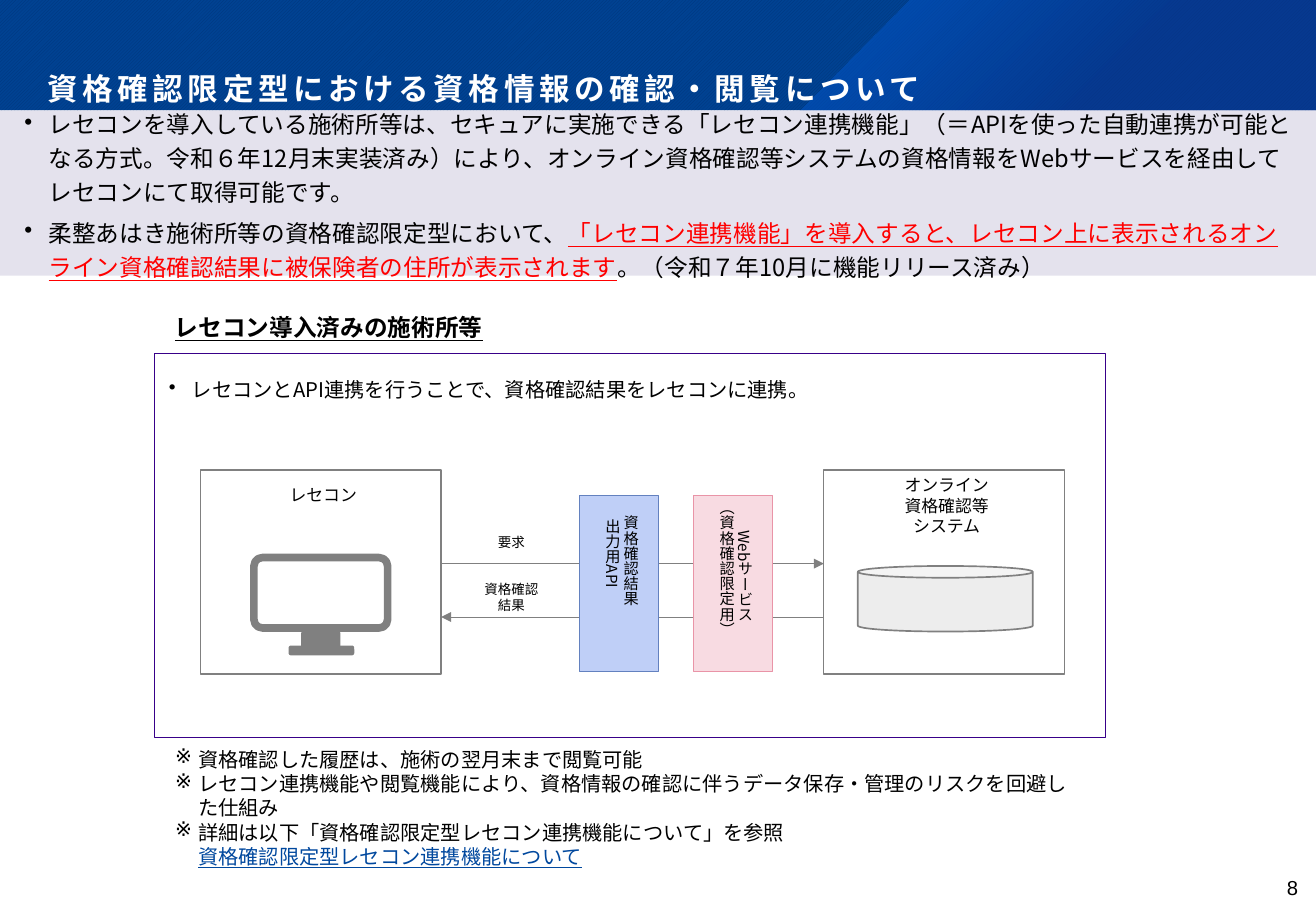
from dataclasses import dataclass
from lxml.etree import SubElement
from pptx import Presentation
from pptx.dml.color import RGBColor
from pptx.enum.dml import MSO_PATTERN
from pptx.enum.shapes import MSO_CONNECTOR, MSO_SHAPE as Preset
from pptx.enum.text import MSO_ANCHOR as Anchor, PP_ALIGN as Align
from pptx.oxml import parse_xml
from pptx.oxml.ns import nsdecls, qn
from pptx.util import Inches, Pt

JAPANESE = "Noto Sans CJK JP"
BLACK, WHITE = RGBColor(0, 0, 0), RGBColor(255, 255, 255)
RED, LINK = RGBColor(255, 0, 0), RGBColor(0, 0x48, 0x9E)
NAVY, NAVY_STRIPE = RGBColor(0, 0x42, 0x92), RGBColor(0, 0x35, 0x79)
LAVENDER, FRAME = RGBColor(0xE4, 0xE2, 0xED), RGBColor(0x38, 0, 0x89)
GRAY, PALE_GRAY = RGBColor(0x80, 0x80, 0x80), RGBColor(0xED, 0xED, 0xED)
API_FILL, API_LINE = RGBColor(0xBF, 0xCF, 0xF7), RGBColor(0x63, 0x81, 0xBF)
WEB_FILL, WEB_LINE = RGBColor(0xF8, 0xDB, 0xE2), RGBColor(0xE9, 0x94, 0xA7)
ACCENT_GRADIENT = (
    f'<a:gradFill {nsdecls("a")} rotWithShape="1"><a:gsLst>'
    '<a:gs pos="0"><a:srgbClr val="0064DF"><a:alpha val="50000"/></a:srgbClr></a:gs>'
    '<a:gs pos="62000"><a:srgbClr val="0C338E"><a:alpha val="55000"/></a:srgbClr></a:gs>'
    '</a:gsLst><a:path path="circle"><a:fillToRect r="100000" b="100000"/></a:path>'
    '</a:gradFill>')


@dataclass
class Box:
    """A rectangle in inches."""
    left: float
    top: float
    width: float
    height: float

    def inner(self, left, top, width, height):
        """Return a box placed relative to this one."""
        return Box(self.left + left, self.top + top, width, height)

    def lengths(self):
        """Return the four lengths for python-pptx."""
        return [Inches(n) for n in (self.left, self.top, self.width, self.height)]


def add_box(slide, box, fill=None, line=None, weight=0.75, preset=Preset.RECTANGLE, adjust=None):
    """Add a preset shape without shadow."""
    shape = slide.shapes.add_shape(preset, *box.lengths())
    shape.shadow.inherit = False
    if adjust is not None:
        shape.adjustments[0] = adjust
    if fill is not None:
        shape.fill.solid()
        shape.fill.fore_color.rgb = fill
    if line is None:
        shape.line.fill.background()
    else:
        shape.line.color.rgb = line
        shape.line.width = Pt(weight)
    return shape


def set_frame(shape, insets, anchor=Anchor.TOP, wrap=True):
    """Set the insets, anchor and wrapping of a text frame."""
    frame = shape.text_frame
    frame.margin_left, frame.margin_top, frame.margin_right, frame.margin_bottom = map(Inches, insets)
    frame.vertical_anchor = anchor
    frame.word_wrap = wrap
    return frame


def add_span(para, text, size, color=BLACK, bold=False, underline=False, name=JAPANESE):
    """Add one run of text with its font."""
    span = para.add_run()
    span.text = text
    font = span.font
    font.size, font.name, font.bold, font.underline = Pt(size), name, bold, underline
    font.color.rgb = color
    SubElement(span._r.get_or_add_rPr(), qn("a:ea"), typeface=name)
    return span


def set_indent(para, indent, bullet=None):
    """Give a paragraph a left margin and, if asked, a hanging bullet."""
    properties = para._p.get_or_add_pPr()
    properties.set("marL", str(Inches(indent)))
    if bullet:
        properties.set("indent", str(-Inches(indent)))
        SubElement(properties, qn("a:buChar"), char=bullet)


def add_lines(frame, lines, size, align=Align.LEFT, **style):
    """Write one paragraph for each line and return the paragraphs."""
    paras = []
    for index, line in enumerate(lines):
        para = frame.add_paragraph() if index else frame.paragraphs[0]
        para.alignment = align
        add_span(para, line, size, **style)
        paras.append(para)
    return paras


def add_text(slide, box, lines, size, insets, anchor=Anchor.TOP, wrap=True, **style):
    """Add a text box and return its paragraphs."""
    frame = set_frame(slide.shapes.add_textbox(*box.lengths()), insets, anchor, wrap)
    return add_lines(frame, lines, size, **style)


def add_header(slide, box):
    """Draw the title band with its slanted accent."""
    band = add_box(slide, box)
    band.fill.patterned()
    band.fill.pattern = MSO_PATTERN.DARK_UPWARD_DIAGONAL
    band.fill.fore_color.rgb, band.fill.back_color.rgb = NAVY_STRIPE, NAVY
    right, bottom = box.left + box.width, box.top + box.height
    builder = slide.shapes.build_freeform(Inches(7.49), Inches(box.top))
    corners = [(right, box.top), (right, bottom), (6.58, bottom)]
    builder.add_line_segments([(Inches(x), Inches(y)) for x, y in corners])
    accent = builder.convert_to_shape()
    accent.shadow.inherit = False
    accent.line.fill.background()
    accent._element.spPr.find(qn("a:custGeom")).addnext(parse_xml(ACCENT_GRADIENT))
    para, = add_text(slide, box, ["資格確認限定型における資格情報の確認・閲覧について"], 18.1,
                     (0.39, 0.36, 0.36, 0.14), Anchor.BOTTOM, color=WHITE, bold=True)
    para.line_spacing = 0.9
    para.runs[0]._r.get_or_add_rPr().set("spc", "270")


def add_summary(slide, box):
    """Draw the shaded summary with two bullets."""
    frame = set_frame(add_box(slide, box, LAVENDER), (0.2,) * 4, Anchor.MIDDLE)
    paras = add_lines(frame, [
        "レセコンを導入している施術所等は、セキュアに実施できる「レセコン連携機能」（＝APIを使った自動連携が可能となる方式。"
        "令和６年12月末実装済み）により、オンライン資格確認等システムの資格情報をWebサービスを経由してレセコンにて取得可能です。",
        "柔整あはき施術所等の資格確認限定型において、"], 14)
    add_span(paras[1], "「レセコン連携機能」を導入すると、レセコン上に表示されるオンライン資格確認結果に"
             "被保険者の住所が表示されます", 14, RED, underline=True)
    add_span(paras[1], "。（令和７年10月に機能リリース済み）", 14)
    for para in paras:
        para.line_spacing = 1.2
        para.space_after = Pt(4)
        set_indent(para, 0.2, "•")


def add_arrow(slide, start, end, height):
    """Draw a horizontal arrow."""
    arrow = slide.shapes.add_connector(MSO_CONNECTOR.STRAIGHT, Inches(start), Inches(height),
                                       Inches(end), Inches(height))
    arrow.line.color.rgb = GRAY
    arrow.line.width = Pt(0.5)
    SubElement(arrow.line._get_or_add_ln(), qn("a:tailEnd"), type="triangle")
    SubElement(arrow._element.spPr, qn("a:effectLst"))


def add_system(slide, box, lines, top_inset):
    """Draw a system frame with its name on top."""
    frame = set_frame(add_box(slide, box, WHITE, GRAY), (0.04, top_inset, 0, 0.04))
    add_lines(frame, lines, 10, Align.CENTER)


def add_monitor(slide, box):
    """Draw a computer monitor: screen, neck and foot."""
    pieces = [((0, 0, 1.1, 0.58), 0.12, WHITE, 4.5),
              ((0.43, 0.62, 0.24, 0.13), 0.09, GRAY, 6),
              ((0.3, 0.74, 0.51, 0.05), 0.09, GRAY, 2.25)]
    for place, adjust, fill, weight in pieces:
        add_box(slide, box.inner(*place), fill, GRAY, weight, Preset.ROUNDED_RECTANGLE, adjust)


def add_gateway(slide, box, lines, fill, line):
    """Draw a service block with vertical text."""
    frame = set_frame(add_box(slide, box, fill, line), (0.04, 0.04, 0, 0.04), Anchor.MIDDLE)
    frame._txBody.bodyPr.set("vert", "eaVert")
    add_lines(frame, lines, 9, Align.CENTER)


def add_diagram(slide, box):
    """Draw the framed flow between the two systems."""
    frame = set_frame(add_box(slide, box, WHITE, FRAME, 0.5), (0.12, 0.2, 0.04, 0.08))
    para, = add_lines(frame, ["レセコンとAPI連携を行うことで、資格確認結果をレセコンに連携。"], 12)
    set_indent(para, 0.19, "•")
    client = box.inner(0.38, 0.96, 1.98, 1.68)
    server = box.inner(5.51, 0.96, 1.98, 1.68)
    add_system(slide, server, ["オンライン", "資格確認等", "システム"], 0.04)
    add_system(slide, client, ["レセコン"], 0.12)
    client_edge = client.left + client.width
    add_arrow(slide, server.left, client_edge, box.top + 2.17)
    add_arrow(slide, client_edge, server.left, box.top + 1.73)
    for top, lines in [(1.43, ["要求"]), (1.88, ["資格確認", "結果"])]:
        add_text(slide, box.inner(2.29, top, 1.3, 0.25), lines, 8, (0.04, 0.07, 0.04, 0.07),
                 Anchor.MIDDLE, wrap=False, align=Align.CENTER)
    add_monitor(slide, client.inner(0.44, 0.72, 1.1, 0.79))
    add_box(slide, server.inner(0.28, 0.79, 1.44, 0.54), PALE_GRAY, GRAY, 1, Preset.CAN, 0.18)
    add_gateway(slide, box.inner(3.5, 1.17, 0.65, 1.45), ["　資格確認結果", "出力用API"], API_FILL, API_LINE)
    add_gateway(slide, box.inner(4.44, 1.17, 0.65, 1.45), ["　Webサービス", "（資格確認限定用）"], WEB_FILL, WEB_LINE)


def add_notes(slide, box):
    """Write the remarks and the reference under the diagram."""
    paras = add_text(slide, box, [
        "資格確認した履歴は、施術の翌月末まで閲覧可能",
        "レセコン連携機能や閲覧機能により、資格情報の確認に伴うデータ保存・管理のリスクを回避した仕組み",
        "詳細は以下「資格確認限定型レセコン連携機能について」を参照"],
        12, (0.04, 0.08, 0.04, 0.28), Anchor.MIDDLE)
    for para in paras:
        set_indent(para, 0.19, "※")
    reference = slide.shapes[-1].text_frame.add_paragraph()
    add_span(reference, "資格確認限定型レセコン連携機能について", 12, LINK, underline=True)
    set_indent(reference, 0.19)


def main():
    """Build the slide and save it."""
    deck = Presentation()
    deck.slide_width, deck.slide_height = Inches(10.83), Inches(7.5)
    page = deck.slides.add_slide(deck.slide_layouts[6])
    add_header(page, Box(0, 0, 10.83, 0.91))
    add_summary(page, Box(0, 0.91, 10.83, 1.36))
    add_notes(page, Box(1.4, 6.27, 7.49, 0.96))
    add_diagram(page, Box(1.27, 2.91, 7.83, 3.16))
    add_text(page, Box(1.36, 2.51, 2.7, 0.37), ["レセコン導入済みの施術所等"], 14, (0.08,) * 4,
             Anchor.MIDDLE, wrap=False, bold=True, underline=True)
    add_text(page, Box(10.09, 7.16, 0.69, 0.3), ["8"], 12, (0.1, 0.05, 0.1, 0.05),
             align=Align.RIGHT, name="Arial")
    deck.save("out.pptx")


if __name__ == "__main__":
    main()
